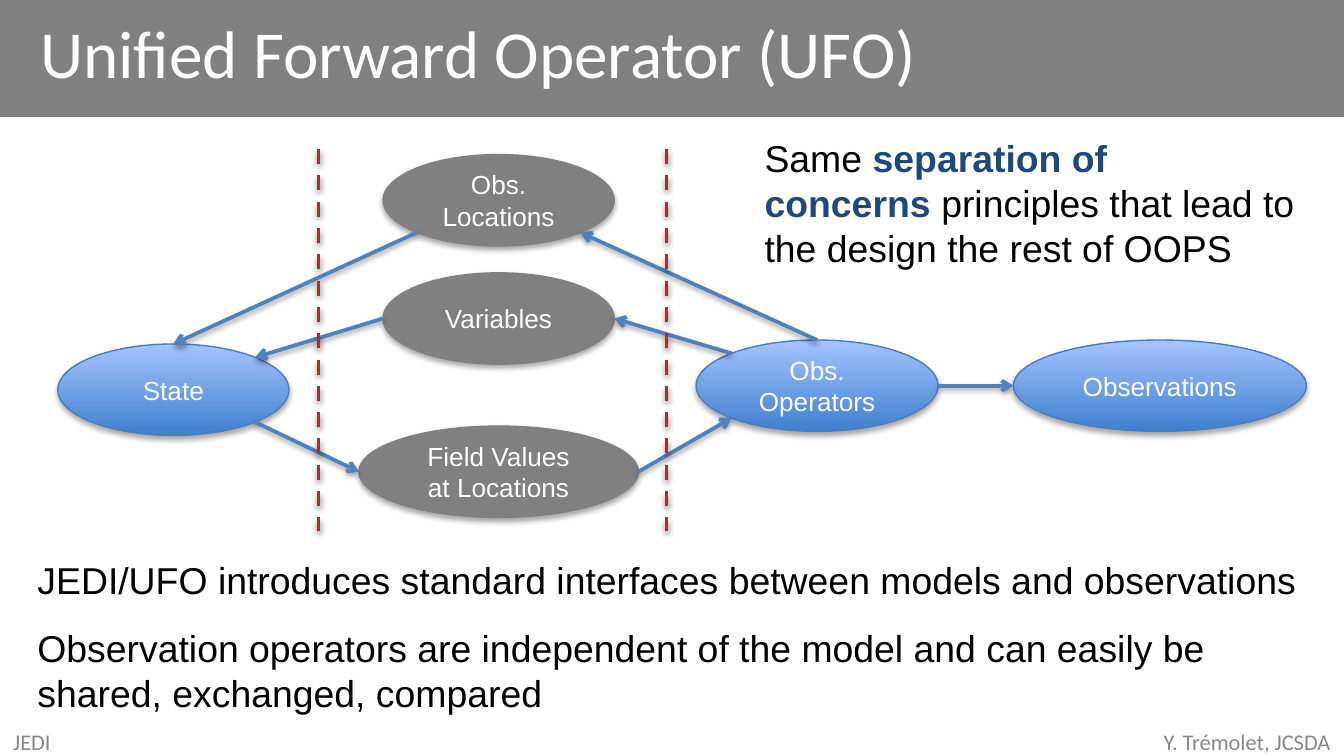
"""Build the Unified Forward Operator slide."""
import math

import lxml.etree
import pptx
import pptx.dml.color
import pptx.enum.dml
import pptx.enum.shapes
import pptx.enum.text
import pptx.oxml.ns
import pptx.util

W = 10
H = W * 9 / 16
OVAL_H = 0.68
GREY, WHITE, BLACK, PALE = "808080", "FFFFFF", "000000", "888888"
ARROW, DIVIDER, EDGE, NAVY = "4F81BD", "953735", "4B7EBC", "1F497D"
GRADIENT = "3F80CE", "A4C4FF"

TITLE = [["Unified Forward Operator (UFO)"]]
FOOTERS = [
    ([["JEDI"]], 0, 2.33, "LEFT"),
    ([["Y. Trémolet, JCSDA"]], 6.83, 3.17, "RIGHT"),
]
OVALS = {
    "state": (["State"], 1.29, 2.56, 1.72, True),
    "operators": (["Obs. Operators"], 6.08, 2.53, 1.8, True),
    "observations": (["Observations"], 8.63, 2.53, 2.18, True),
    "locations": (["Obs. Locations"], 3.71, 1.15, 1.72, False),
    "variables": (["Variables"], 3.71, 2.03, 1.72, False),
    "values": (["Field Values", "at Locations"], 3.71, 3.17, 2.08, False),
}
ARROWS = [
    ("operators", "N", "locations", "SE"),
    ("operators", "NW", "variables", "E"),
    ("variables", "W", "state", "NE"),
    ("locations", "SW", "state", "N"),
    ("state", "SE", "values", "W"),
    ("values", "E", "operators", "SW"),
    ("operators", "E", "observations", "W"),
]
DIVIDERS = [2.37, 4.96]
CONCLUSIONS = [
    ["JEDI/UFO introduces standard interfaces between models and observations"],
    ["Observation operators are independent of the model and can easily be "
     "shared, exchanged, compared"],
]
PRINCIPLE = [["Same ", ("separation of", NAVY), "\n", ("concerns ", NAVY),
              "principles that lead to the design the rest of OOPS"]]
ANGLES = {"E": 0, "SE": 45, "SW": 135, "W": 180, "NW": 225, "N": 270, "NE": 315}

inch = pptx.util.Inches


def rgb(value):
    """Turn a hex string into a colour."""
    return pptx.dml.color.RGBColor.from_string(value)


def write(sp, paragraphs, size, font, color, align="LEFT", anchor="TOP", gap=0):
    """Write paragraphs of runs; a (text, colour) run is bold."""
    tf = sp.text_frame
    tf.word_wrap = True
    tf.vertical_anchor = getattr(pptx.enum.text.MSO_ANCHOR, anchor)
    for i, runs in enumerate(paragraphs):
        p = tf.add_paragraph() if i else tf.paragraphs[0]
        p.alignment = getattr(pptx.enum.text.PP_ALIGN, align)
        if i and gap:
            p.space_before = pptx.util.Pt(gap)
        for run in runs:
            if run == "\n":
                p.add_line_break()
                continue
            text, tint = (run, None) if isinstance(run, str) else run
            r = p.add_run()
            r.text = text
            r.font.size, r.font.name = pptx.util.Pt(size), font
            r.font.bold = tint is not None
            r.font.color.rgb = rgb(tint or color)


def add_text(s, box, *args, **options):
    """Add a text box at left, top, width, height."""
    write(s.shapes.add_textbox(*map(inch, box)), *args, **options)


def add_shadow(sp, distance, alpha):
    """Give a shape or connector a soft shadow straight below."""
    ns = pptx.oxml.ns.qn
    effects = lxml.etree.SubElement(sp._element.spPr, ns("a:effectLst"))
    outer = lxml.etree.SubElement(
        effects, ns("a:outerShdw"), blurRad=str(pptx.util.Pt(3.1)),
        dist=str(pptx.util.Pt(distance)), dir="5400000", rotWithShape="0")
    color = lxml.etree.SubElement(outer, ns("a:srgbClr"), val=BLACK)
    lxml.etree.SubElement(color, ns("a:alpha"), val=str(alpha * 1000))


def add_line(s, start, end, color, dashed=False):
    """Add a dashed divider or an arrow."""
    c = s.shapes.add_connector(
        pptx.enum.shapes.MSO_CONNECTOR.STRAIGHT, *map(inch, (*start, *end)))
    c.line.color.rgb = rgb(color)
    c.line.width = pptx.util.Pt(2)
    if dashed:
        c.line.dash_style = pptx.enum.dml.MSO_LINE.DASH
    else:
        lxml.etree.SubElement(c.line._get_or_add_ln(),
                              pptx.oxml.ns.qn("a:tailEnd"), type="arrow")
    add_shadow(c, 1.6, 38)


def rim(name, side):
    """Return the point on an oval's rim at a compass side."""
    _, center, top, width, _ = OVALS[name]
    angle = math.radians(ANGLES[side])
    return (center + width / 2 * math.cos(angle),
            top + OVAL_H / 2 * (1 + math.sin(angle)))


def add_oval(s, lines, center, top, width, shaded):
    """Add a labelled oval, shaded blue or plain grey."""
    sp = s.shapes.add_shape(pptx.enum.shapes.MSO_SHAPE.OVAL,
                            *map(inch, (center - width / 2, top, width, OVAL_H)))
    if shaded:
        sp.fill.gradient()
        sp.fill.gradient_angle = 90
        for stop, color in zip(sp.fill.gradient_stops, GRADIENT):
            stop.color.rgb = rgb(color)
    else:
        sp.fill.solid()
        sp.fill.fore_color.rgb = rgb(GREY)
    sp.line.color.rgb = rgb(EDGE if shaded else GREY)
    sp.line.width = pptx.util.Pt(0.75)
    add_shadow(sp, 1.8, 35)
    write(sp, [[line] for line in lines], 14, "Arial", WHITE, "CENTER", "MIDDLE")


def main():
    """Build and save the slide."""
    prs = pptx.Presentation()
    prs.slide_width, prs.slide_height = inch(W), inch(H)
    s = prs.slides.add_slide(prs.slide_layouts[6])

    band = s.shapes.add_shape(pptx.enum.shapes.MSO_SHAPE.RECTANGLE,
                              0, 0, inch(W), inch(0.87))
    band.shadow.inherit = False
    band.fill.solid()
    band.fill.fore_color.rgb = rgb(GREY)
    band.line.fill.background()
    add_text(s, (0.2, 0, 8.34, 0.77), TITLE, 36, "Calibri", WHITE, anchor="MIDDLE")
    for text, left, width, align in FOOTERS:
        add_text(s, (left, 5.42, width, 0.2), text, 12, "Calibri", PALE,
                 align, "MIDDLE")

    for oval in OVALS.values():
        add_oval(s, *oval)
    for source, source_side, target, target_side in ARROWS:
        add_line(s, rim(source, source_side), rim(target, target_side), ARROW)
    for x in DIVIDERS:
        add_line(s, (x, 1.11), (x, 3.95), DIVIDER, dashed=True)

    add_text(s, (0.18, 4.1, 9.58, 1.28), CONCLUSIONS, 20, "Arial", BLACK, gap=12)
    add_text(s, (5.59, 0.96, 4.32, 1.11), PRINCIPLE, 20, "Arial", BLACK)
    prs.save("out.pptx")


if __name__ == "__main__":
    main()
